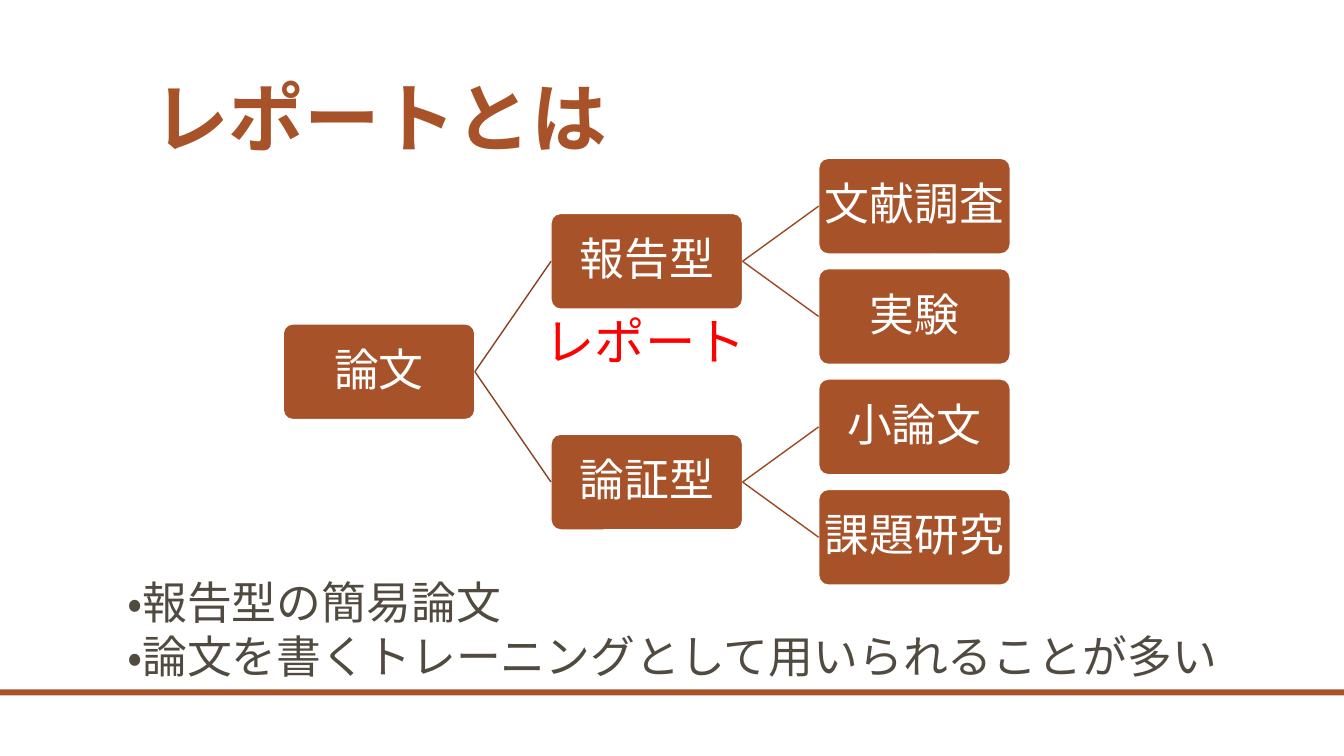
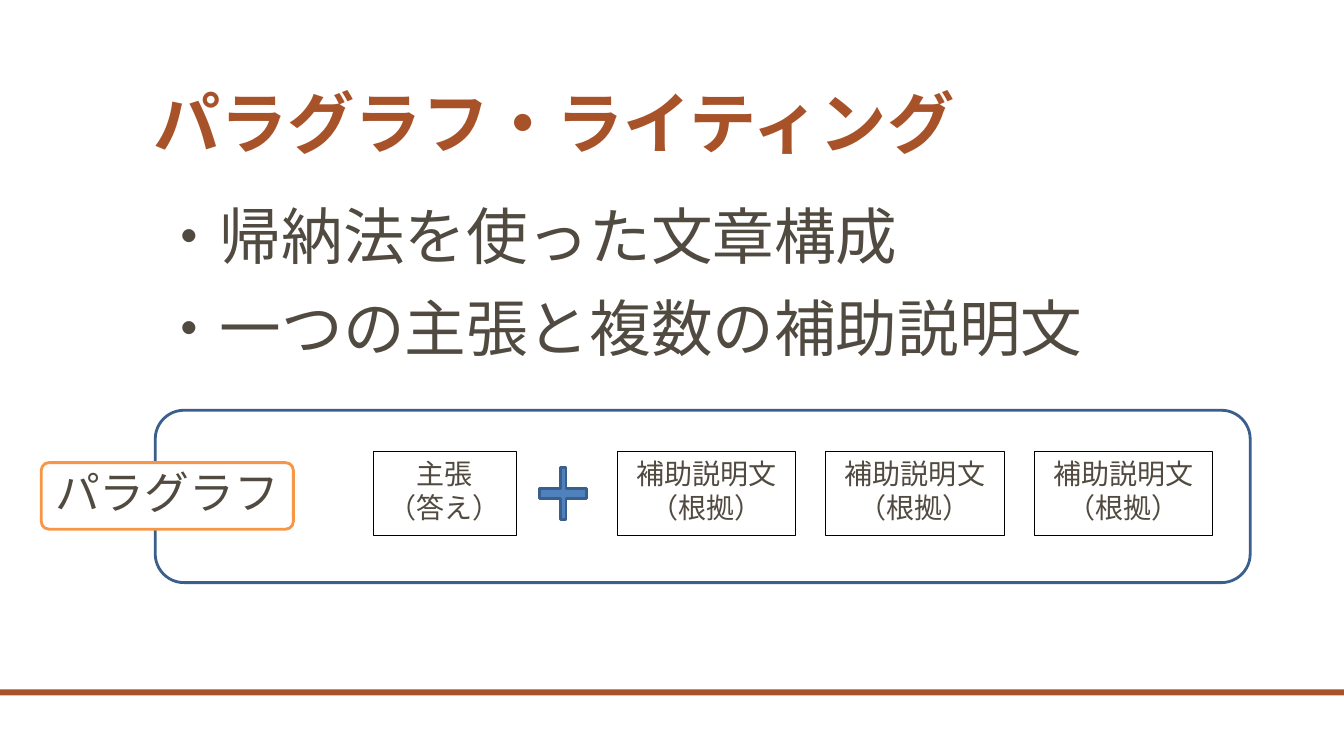
from dataclasses import dataclass

from lxml import etree
from pptx import Presentation
from pptx.dml.color import RGBColor
from pptx.enum import lang, shapes, text
from pptx.oxml.ns import qn
from pptx.util import Inches, Pt


@dataclass(frozen=True)
class Theme:
    rust: str = "A85229"
    branch_first: str = "874221"
    branch_second: str = "984A25"
    ink: str = "514A40"
    white: str = "FFFFFF"
    black: str = "000000"
    red: str = "FF0000"
    blue: str = "4F81BD"
    navy: str = "3A5F8C"
    orange: str = "F79646"
    gothic: str = "Noto Sans CJK JP"
    serif: str = "Cambria"
    school: str = "TeX Gyre Schola"
    title_large: int = 54
    title: int = 48
    body_large: int = 44
    callout: int = 36
    body: int = 32
    small: int = 20


theme = Theme()


def write(shape, lines, font, size, color, align=text.PP_ALIGN.LEFT,
          anchor=text.MSO_ANCHOR.TOP, spacing=1.0, gap=0, indent=0,
          inset=None, wrap=True, bold=False):
    """Fill a shape with evenly styled paragraphs."""
    frame = shape.text_frame
    frame.text = "\n".join(lines)
    frame.auto_size = text.MSO_AUTO_SIZE.NONE
    frame.word_wrap = wrap
    frame.vertical_anchor = anchor
    if inset is not None:
        frame.margin_left = frame.margin_right = Inches(inset)
        frame.margin_top = frame.margin_bottom = Inches(inset)
    for i, paragraph in enumerate(frame.paragraphs):
        paragraph.alignment = align
        paragraph.line_spacing = spacing
        paragraph.space_before = Pt(gap if i else 0)
        properties = paragraph._p.get_or_add_pPr()
        if shape.is_placeholder:
            properties.set("marL", str(Inches(indent)))
            properties.set("indent", "0")
            etree.SubElement(properties, qn("a:buNone"))
        paragraph.font.name = font
        paragraph.font.size = Pt(size)
        paragraph.font.bold = bold
        paragraph.font.color.rgb = RGBColor.from_string(color)
        paragraph.font.language_id = lang.MSO_LANGUAGE_ID.JAPANESE
        if font == theme.gothic:  # East Asian face gives the full-width middle dot
            defaults = properties.find(qn("a:defRPr"))
            etree.SubElement(defaults, qn("a:ea")).set("typeface", font)


def add_box(slide, kind, area, fill=None, line=None, width=1, corner=None):
    """Add a flat preset shape; area is left, top, width, height in inches."""
    box = slide.shapes.add_shape(kind, *map(Inches, area))
    box.shadow.inherit = False
    if fill:
        box.fill.solid()
        box.fill.fore_color.rgb = RGBColor.from_string(fill)
    else:
        box.fill.background()
    if line:
        box.line.color.rgb = RGBColor.from_string(line)
        box.line.width = Pt(width)
    else:
        box.line.fill.background()
    if corner is not None:
        box.adjustments[0] = corner
    return box


RECT = shapes.MSO_SHAPE.RECTANGLE
ROUND = shapes.MSO_SHAPE.ROUNDED_RECTANGLE
CENTER = text.PP_ALIGN.CENTER
MIDDLE = text.MSO_ANCHOR.MIDDLE

prs = Presentation()
prs.slide_width, prs.slide_height = Inches(13.33), Inches(7.5)
layout = prs.slide_layouts[1]

# Titles and lists of both slides
contents = [
    dict(title="レポートとは", title_size=theme.title_large,
         area=(1.16, 5.65, 11.6, 1.18),
         items=["・報告型の簡易論文", "・論文を書くトレーニングとして用いられることが多い"],
         style=dict(font=theme.serif, size=theme.body)),
    dict(title="パラグラフ・ライティング", title_size=theme.title,
         area=(1.42, 2, 10.5, 4.5),
         items=["・帰納法を使った文章構成", "・一つの主張と複数の補助説明文"],
         style=dict(font=theme.gothic, size=theme.body_large,
                    spacing=0.9, gap=18, indent=0.05)),
]
for content in contents:
    slide = prs.slides.add_slide(layout)
    title, body = slide.placeholders
    for holder, area in ((title, (1.42, 0.42, 10.5, 1.25)), (body, content["area"])):
        holder.left, holder.top, holder.width, holder.height = map(Inches, area)
    write(title, [content["title"]], theme.gothic, content["title_size"], theme.rust,
          anchor=text.MSO_ANCHOR.BOTTOM, spacing=0.9, bold=True)
    write(body, content["items"], color=theme.ink, **content["style"])
report, writing = prs.slides

# Shared footer band, kept on the slide master
band = add_box(report, RECT, (0, 6.84, 13.33, 0.06), theme.rust)
prs.slide_master.shapes.element.append(band.element)

# Report: tree of paper types, each parent centred on its children
node_width, node_height = 1.9, 0.95
column_step, row_step = 2.655, 1.095
tree = [  # label, column, row, parent
    ("論文", 0, 1.5, None),
    ("報告型", 1, 0.5, "論文"),
    ("論証型", 1, 2.5, "論文"),
    ("文献調査", 2, 0, "報告型"),
    ("実験", 2, 1, "報告型"),
    ("小論文", 2, 2, "論証型"),
    ("課題研究", 2, 3, "論証型"),
]
nodes = {}
for label, column, row, parent in tree:
    area = (2.81 + column * column_step, 1.57 + row * row_step, node_width, node_height)
    node = nodes[label] = add_box(report, ROUND, area, theme.rust, theme.white, corner=0.1)
    write(node, [label], theme.serif, theme.body, theme.white, CENTER, MIDDLE,
          spacing=0.9, inset=0.02, wrap=False)
    if parent:
        branch = report.shapes.add_connector(shapes.MSO_CONNECTOR.STRAIGHT, 0, 0, 0, 0)
        branch.begin_connect(nodes[parent], 3)
        branch.end_connect(node, 1)
        branch.line.width = Pt(1)
        branch.line.color.rgb = RGBColor.from_string(
            theme.branch_first if column == 1 else theme.branch_second)
        etree.SubElement(branch.element.spPr, qn("a:effectLst"))

callout = report.shapes.add_textbox(*map(Inches, (5.3, 3.03, 2.22, 0.71)))
write(callout, ["レポート"], theme.serif, theme.callout, theme.red, wrap=False)

# Writing: frame of one paragraph
add_box(writing, ROUND, (1.54, 4.07, 10.86, 1.71), line=theme.navy, width=2)

# Writing: claim plus three supporting sentences
sentences = [(3.7, 1.42, ["主張", "（答え）"])]
sentences += [(6.12 + i * 2.07, 1.77, ["補助説明文", "（根拠）"]) for i in range(3)]
for left, width, lines in sentences:
    sentence = add_box(writing, RECT, (left, 4.48, width, 0.83),
                       theme.white, theme.black, 0.5)
    write(sentence, lines, theme.school, theme.small, theme.ink, CENTER, wrap=False)
add_box(writing, shapes.MSO_SHAPE.CROSS, (5.35, 4.64, 0.47, 0.51),
        theme.blue, theme.navy, 2, corner=0.438)

# Writing: name tag on the frame
tag = add_box(writing, ROUND, (0.41, 4.59, 2.5, 0.66),
              theme.white, theme.orange, 2, corner=0.115)
write(tag, ["パラグラフ"], theme.school, theme.body, theme.ink, CENTER, inset=0)

prs.save("out.pptx")
